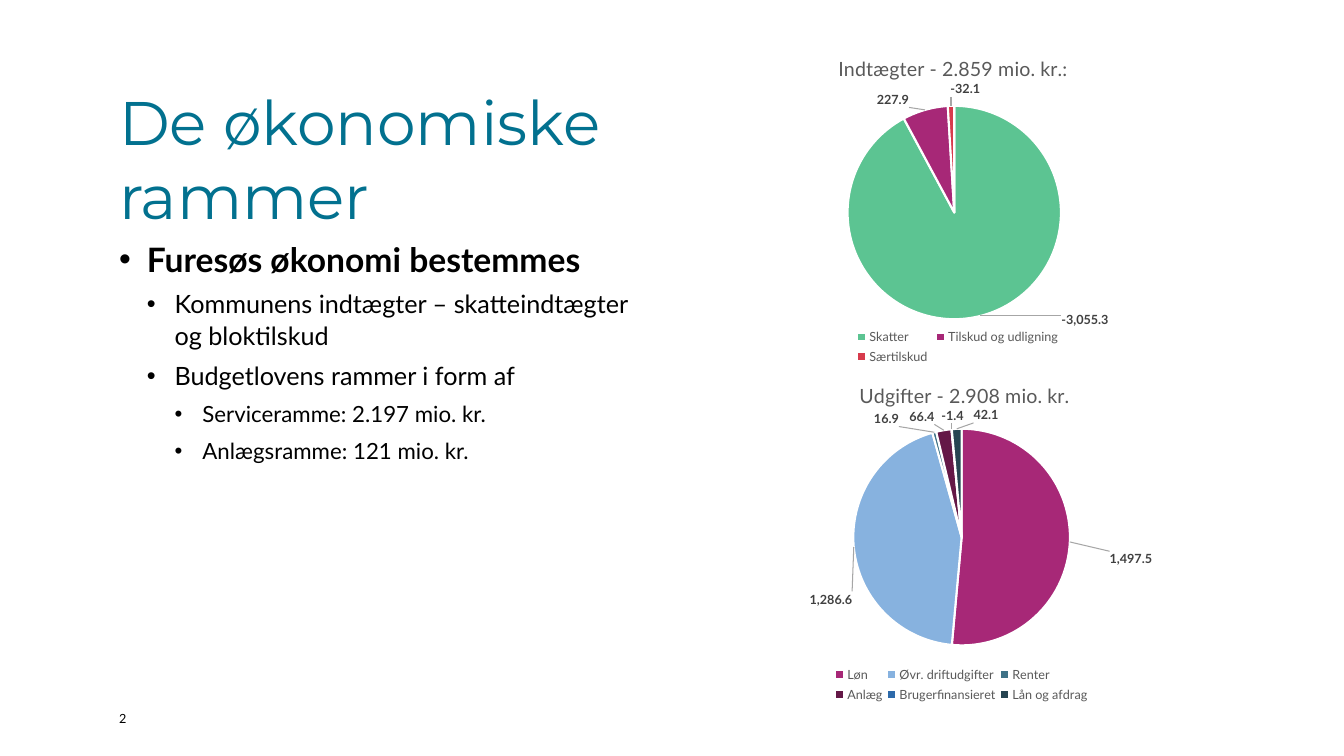
import pptx
import pptx.chart.data
import pptx.dml.color
import pptx.enum.chart
import pptx.enum.text
import pptx.oxml
import pptx.oxml.ns
import pptx.util
from pptx.util import Cm

qn = pptx.oxml.ns.qn
TEXT_LEFT, TEXT_WIDTH = 3, 13.28
INDENT = 0.7
GREY = "595959"


def colour(value):
    return pptx.dml.color.RGBColor.from_string(value)


def style(font, size, hex_colour, name="Lato", bold=False):
    font.size = pptx.util.Pt(size)
    font.name = name
    font.bold = bold
    font.color.rgb = colour(hex_colour)


def add_element(parent, tag, **attributes):
    element = pptx.oxml.parse_xml(f"<{tag} {pptx.oxml.ns.nsdecls(tag.split(':')[0])}/>")
    for key, value in attributes.items():
        element.set(key, str(value))
    parent.append(element)
    return element


def add_text_frame(slide, left, top, width, height):
    frame = slide.shapes.add_textbox(Cm(left), Cm(top), Cm(width), Cm(height)).text_frame
    frame.word_wrap = True
    frame.margin_left = frame.margin_top = frame.margin_right = frame.margin_bottom = 0
    return frame


def add_line(slide, box, text, size, hex_colour, name="Lato"):
    frame = add_text_frame(slide, *box)
    frame.text = text
    style(frame.paragraphs[0].runs[0].font, size, hex_colour, name)
    return frame


def add_bullets(slide, box, items):
    frame = add_text_frame(slide, *box)
    for index, (level, text) in enumerate(items):
        paragraph = frame.add_paragraph() if index else frame.paragraphs[0]
        paragraph.text = text
        paragraph.level = level
        paragraph.line_spacing = 1.05
        paragraph.space_after = pptx.util.Pt(6)
        properties = paragraph._p.get_or_add_pPr()
        properties.set("marL", str(Cm(INDENT * (level + 1))))
        properties.set("indent", str(Cm(-INDENT)))
        add_element(properties, "a:buFont", typeface="Arial")
        add_element(properties, "a:buChar", char="•")
        style(paragraph.runs[0].font, (24, 18, 15.9)[level], "000000", bold=level == 0)


def set_layout(parent, after=None, **values):
    """Give a chart part a manual layout, placed behind the child named in after."""
    for old in parent.findall(qn("c:layout")):
        parent.remove(old)
    layout = add_element(parent, "c:layout")
    manual = add_element(layout, "c:manualLayout")
    for key, value in values.items():
        add_element(manual, "c:" + key, val=value)
    previous = parent.find(qn(after)) if after else None
    if previous is None:
        parent.insert(0, layout)
    else:
        previous.addnext(layout)


def edge_layout(x, y, w, h):
    return dict(xMode="edge", yMode="edge", x=x, y=y, w=w, h=h)


def add_leader_lines(labels, hex_colour):
    switch = labels.find(qn("c:showLeaderLines"))
    if switch is None:
        switch = add_element(labels, "c:showLeaderLines")
    switch.set("val", "1")
    outline = add_element(add_element(add_element(
        labels, "c:leaderLines"), "c:spPr"), "a:ln", w=pptx.util.Pt(0.75))
    add_element(add_element(outline, "a:solidFill"), "a:srgbClr", val=hex_colour)


def add_pie(slide, box, title, title_place, plot_place, legend_place, slices):
    names, values, fills, label_shifts = zip(*slices)
    data = pptx.chart.data.CategoryChartData(number_format="#,##0.0")
    data.categories = names
    data.add_series("Series 1", values)
    chart = slide.shapes.add_chart(
        pptx.enum.chart.XL_CHART_TYPE.PIE, *map(Cm, box), data).chart
    style(chart.font, 10, "000000")

    # Title, plot and legend
    chart.has_title = True
    heading = chart.chart_title.text_frame
    heading.text = title
    style(heading.paragraphs[0].runs[0].font, 14, GREY)
    x, y = title_place
    set_layout(chart.chart_title._element, "c:tx", xMode="edge", yMode="edge", x=x, y=y)
    set_layout(chart._chartSpace.chart.plotArea, layoutTarget="inner",
               **edge_layout(*plot_place))
    chart.has_legend = True
    chart.legend.position = pptx.enum.chart.XL_LEGEND_POSITION.BOTTOM
    chart.legend.include_in_layout = False
    style(chart.legend.font, 9, GREY)
    set_layout(chart.legend._element, "c:legendPos", **edge_layout(*legend_place))

    # Slices and their shifted labels
    plot = chart.plots[0]
    plot.vary_by_categories = True
    series = plot.series[0]
    labels = series.data_labels
    labels.show_value = True
    labels.number_format = "#,##0.0"
    labels.number_format_is_linked = False
    labels.position = pptx.enum.chart.XL_LABEL_POSITION.OUTSIDE_END
    style(labels.font, 9, "404040", bold=True)
    for index, (fill, (shift_x, shift_y)) in enumerate(zip(fills, label_shifts)):
        point = series.points[index]
        point.format.fill.solid()
        point.format.fill.fore_color.rgb = colour(fill)
        point.format.line.color.rgb = colour("FFFFFF")
        point.format.line.width = pptx.util.Pt(1.5)
        label = point.data_label
        style(label.font, 9, "404040", bold=True)
        label.position = pptx.enum.chart.XL_LABEL_POSITION.OUTSIDE_END
        set_layout(label._dLbl, "c:idx", x=shift_x, y=shift_y)
    add_leader_lines(labels._element, "A6A6A6")


def main():
    deck = pptx.Presentation()
    deck.slide_width, deck.slide_height = Cm(33.87), Cm(19.05)
    slide = deck.slides.add_slide(deck.slide_layouts[6])

    # Text column
    add_line(slide, (TEXT_LEFT, 2.13, TEXT_WIDTH, 3.61), "De økonomiske rammer",
             43.9, "02718F", "Montserrat")
    add_bullets(slide, (TEXT_LEFT, 5.96, TEXT_WIDTH, 9.68), [
        (0, "Furesøs økonomi bestemmes"),
        (1, "Kommunens indtægter – skatteindtægter og bloktilskud"),
        (1, "Budgetlovens rammer i form af"),
        (2, "Serviceramme: 2.197 mio. kr."),
        (2, "Anlægsramme: 121 mio. kr."),
    ])
    page_number = add_line(slide, (TEXT_LEFT, 17.79, 1.09, 0.51), "2", 9, "000000")
    page_number.vertical_anchor = pptx.enum.text.MSO_ANCHOR.BOTTOM

    # Income
    add_pie(slide, (19.58, 1.12, 9.12, 8.15), "Indtægter - 2.859 mio. kr.:",
            (0.16, 0.02), (0.19, 0.19, 0.6, 0.66), (0.21, 0.87, 0.58, 0.13), [
                ("Skatter", -3055.3, "5CC492", (0.22, -0.03)),
                ("Tilskud og udligning", 227.9, "A72877", (-0.04, 0.01)),
                ("Særtilskud", -32.1, "D73B4C", (0.04, -0.01)),
            ])

    # Expenses
    add_pie(slide, (18.9, 9.27, 10.67, 8.53), "Udgifter - 2.908 mio. kr.",
            (0.25, 0.03), (0.24, 0.18, 0.52, 0.64), (0.19, 0.87, 0.62, 0.13), [
                ("Løn", 1497.5, "A72877", (0.08, 0.05)),
                ("Øvr. driftudgifter", 1286.6, "87B2DF", (0.01, 0.13)),
                ("Renter", 16.9, "3F7287", (-0.08, 0)),
                ("Anlæg", 66.4, "641847", (-0.02, 0)),
                ("Brugerfinansieret", -1.4, "2D6AAA", (0.03, 0)),
                ("Lån og afdrag", 42.1, "264451", (0.07, 0)),
            ])
    deck.save("out.pptx")


if __name__ == "__main__":
    main()
